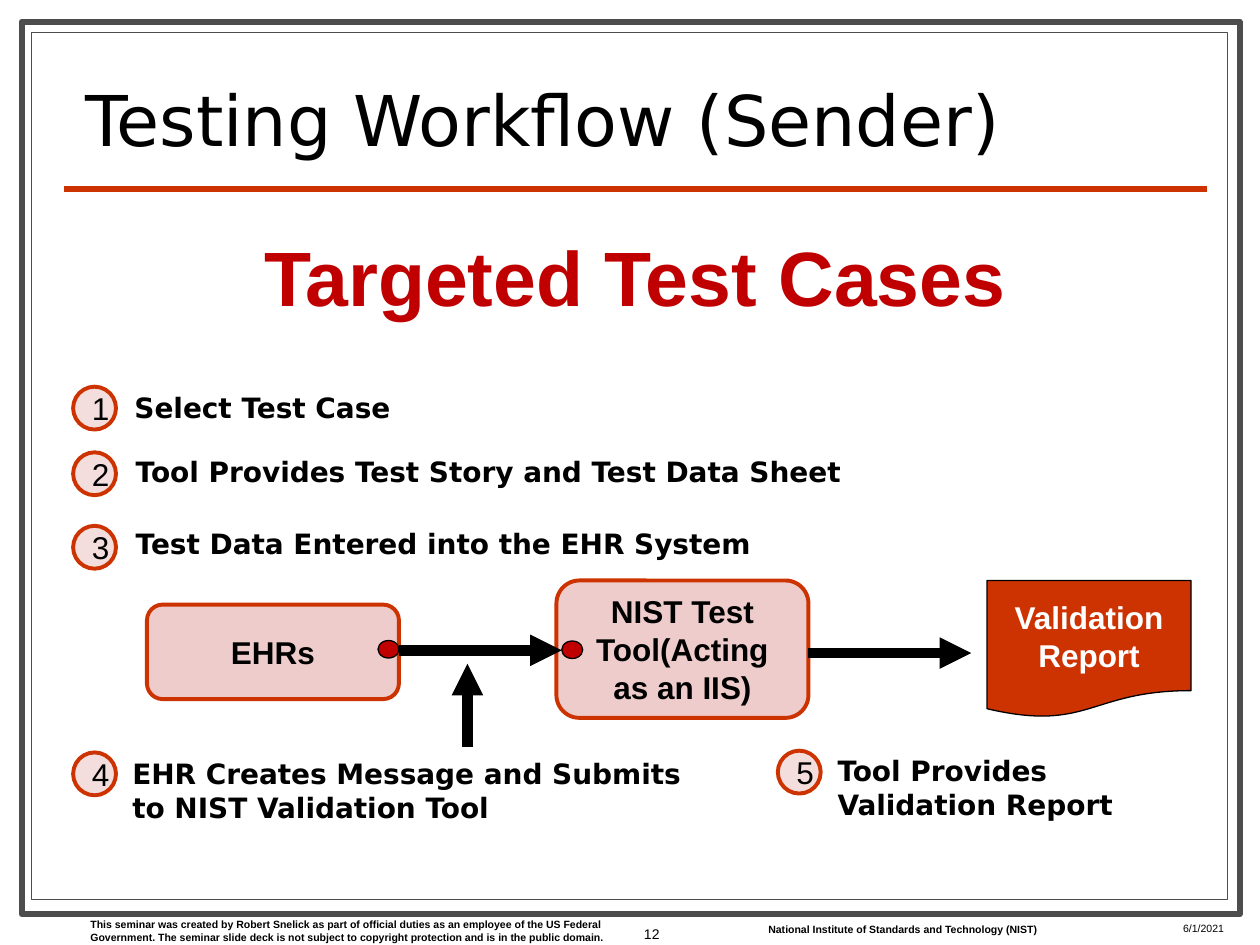
"""Builds the sender testing workflow slide."""
from lxml.etree import SubElement
from pptx import Presentation
from pptx.dml.color import RGBColor
from pptx.enum.shapes import MSO_CONNECTOR as Conn, MSO_SHAPE as Kind
from pptx.enum.text import MSO_ANCHOR as Anchor, PP_ALIGN as Align
from pptx.oxml.ns import qn
from pptx.util import Pt

BLACK = RGBColor(0, 0, 0)
WHITE = RGBColor(255, 255, 255)
GRAY = RGBColor(0x4D, 0x4D, 0x4D)
RUST = RGBColor(0xCC, 0x33, 0)
RED = RGBColor(0xC0, 0, 0)
PINK = RGBColor(0xEE, 0xCC, 0xCC)
PALE = RGBColor(0xF3, 0xDE, 0xDD)
SANS, WIDE = "Arial", "DejaVu Sans"
LEFT, MID, RIGHT = Align.LEFT, Align.CENTER, Align.RIGHT
TOP, CORE, BASE = Anchor.TOP, Anchor.MIDDLE, Anchor.BOTTOM

FRAMES = [((12.4, 12.4, 696, 510), 3.5), ((18.2, 18.5, 683.3, 495.4), 0.75)]
LABELS = [
    ("This seminar was created by Robert Snelick as part of official duties as an "
     "employee of the US Federal Government. The seminar slide deck is not subject "
     "to copyright protection and is in the public domain.",
     (44.6, 521.3, 312, 21.8), 6, SANS, BLACK, True, LEFT, TOP),
    ("National Institute of Standards and Technology (NIST)",
     (432, 524, 171.5, 14.5), 6, SANS, BLACK, True, LEFT, TOP),
    ("6/1/2021", (669, 523.5, 45.2, 11.5), 6, SANS, BLACK, False, LEFT, TOP),
    ("12", (342, 515, 42, 37.5), 8, SANS, BLACK, False, RIGHT, CORE),
    ("Testing Workflow (Sender)",
     (42, 30, 642, 65), 40, WIDE, BLACK, False, LEFT, BASE),
    ("Targeted Test Cases",
     (33, 127.5, 660, 60.5), 44, SANS, RED, True, MID, TOP),
]
STEPS = [
    ("Select Test Case", (41.8, 221), (66, 219.6, 168, 26.6), MID),
    ("Tool Provides Test Story and Test Data Sheet",
     (41.8, 258.5), (70.5, 256.3, 474, 26.6), LEFT),
    ("Test Data Entered into the EHR System",
     (41.8, 300.5), (70.5, 297.2, 474, 26.6), LEFT),
    ("EHR Creates Message and Submits to NIST Validation Tool",
     (41.8, 430), (68.5, 428.9, 346, 46), LEFT),
    ("Tool Provides Validation Report",
     (444.5, 429), (471.5, 427.2, 193, 46), LEFT),
]
NODES = [
    ("EHRs", Kind.ROUNDED_RECTANGLE, (84, 345.5, 144, 54), PINK, RUST, 2.25, BLACK),
    ("NIST Test Tool(Acting as an IIS)", Kind.ROUNDED_RECTANGLE,
     (318, 331.7, 144, 78.5), PINK, RUST, 2.25, BLACK),
    ("Validation Report", Kind.FLOWCHART_DOCUMENT,
     (564, 331.7, 116.6, 78.5), RUST, BLACK, 0.75, WHITE),
]
ARROWS = [(228, 371.6, 321, 371.6), (267.1, 427, 267.1, 379.3),
          (462, 373.2, 555, 373.2)]
DOTS = [(216, 366), (321, 366.3)]
RING = 24.5

deck = Presentation()
deck.slide_width, deck.slide_height = Pt(720), Pt(540)
slide = deck.slides.add_slide(deck.slide_layouts[6])
shapes = slide.shapes


def pts(nums):
    return [Pt(n) for n in nums]


def write(shape, text, size, face, tint, bold, align, anchor):
    frame = shape.text_frame
    frame.word_wrap = True
    frame.vertical_anchor = anchor
    frame.text = text
    para = frame.paragraphs[0]
    para.alignment = align
    font = para.runs[0].font
    font.size, font.name, font.bold = Pt(size), face, bold
    font.color.rgb = tint
    return para


def label(text, box, *style):
    return write(shapes.add_textbox(*pts(box)), text, *style)


def draw(kind, box, fill, edge, width):
    shape = shapes.add_shape(kind, *pts(box))
    shape.shadow.inherit = False
    shape.fill.solid()
    shape.fill.fore_color.rgb = fill
    shape.line.color.rgb = edge
    shape.line.width = Pt(width)
    return shape


def link(ends, tint, width, head=False):
    line = shapes.add_connector(Conn.STRAIGHT, *pts(ends))
    line.line.color.rgb = tint
    line.line.width = Pt(width)
    if head:
        SubElement(line.line._get_or_add_ln(), qn("a:tailEnd"), type="triangle")
    SubElement(line._element.spPr, qn("a:effectLst"))


for box, width in FRAMES:
    draw(Kind.RECTANGLE, box, WHITE, GRAY, width)
link((36.8, 108, 690, 108), RUST, 3)

for item in LABELS:
    para = label(*item)
    if item[-1] == BASE:
        para.line_spacing = 0.8

for text, kind, box, fill, edge, width, tint in NODES:
    node = draw(kind, box, fill, edge, width)
    write(node, text, 18, SANS, tint, True, MID, CORE)

for ends in ARROWS:
    link(ends, BLACK, 6, True)
for spot in DOTS:
    draw(Kind.OVAL, (*spot, 12, 10), RED, BLACK, 0.75)

for num, (text, spot, box, align) in enumerate(STEPS, 1):
    ring = draw(Kind.OVAL, (*spot, RING, RING), PALE, RUST, 2.25)
    write(ring, str(num), 18, SANS, BLACK, False, MID, CORE)
    label(text, box, 16, WIDE, BLACK, True, align, TOP)

deck.save("out.pptx")
